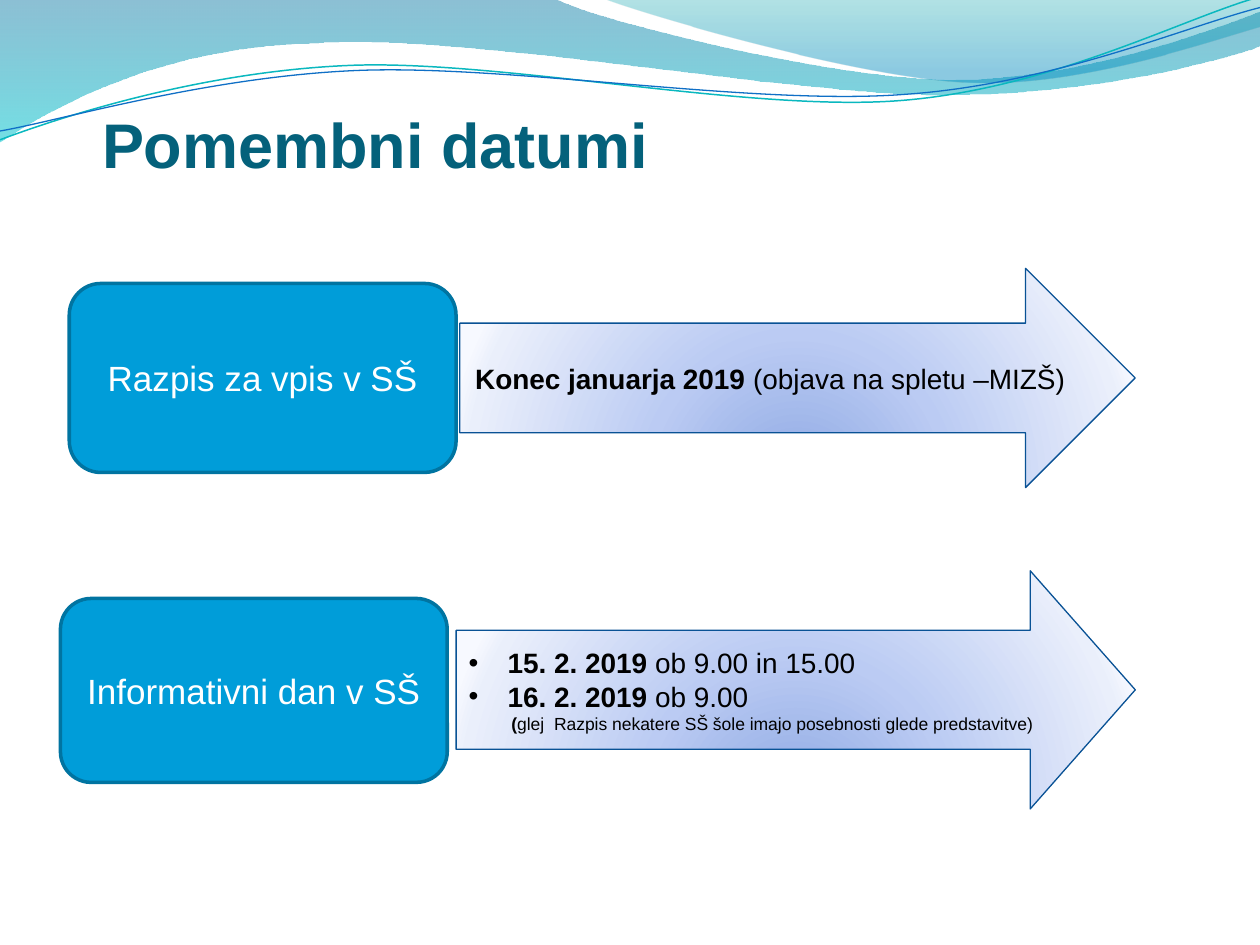
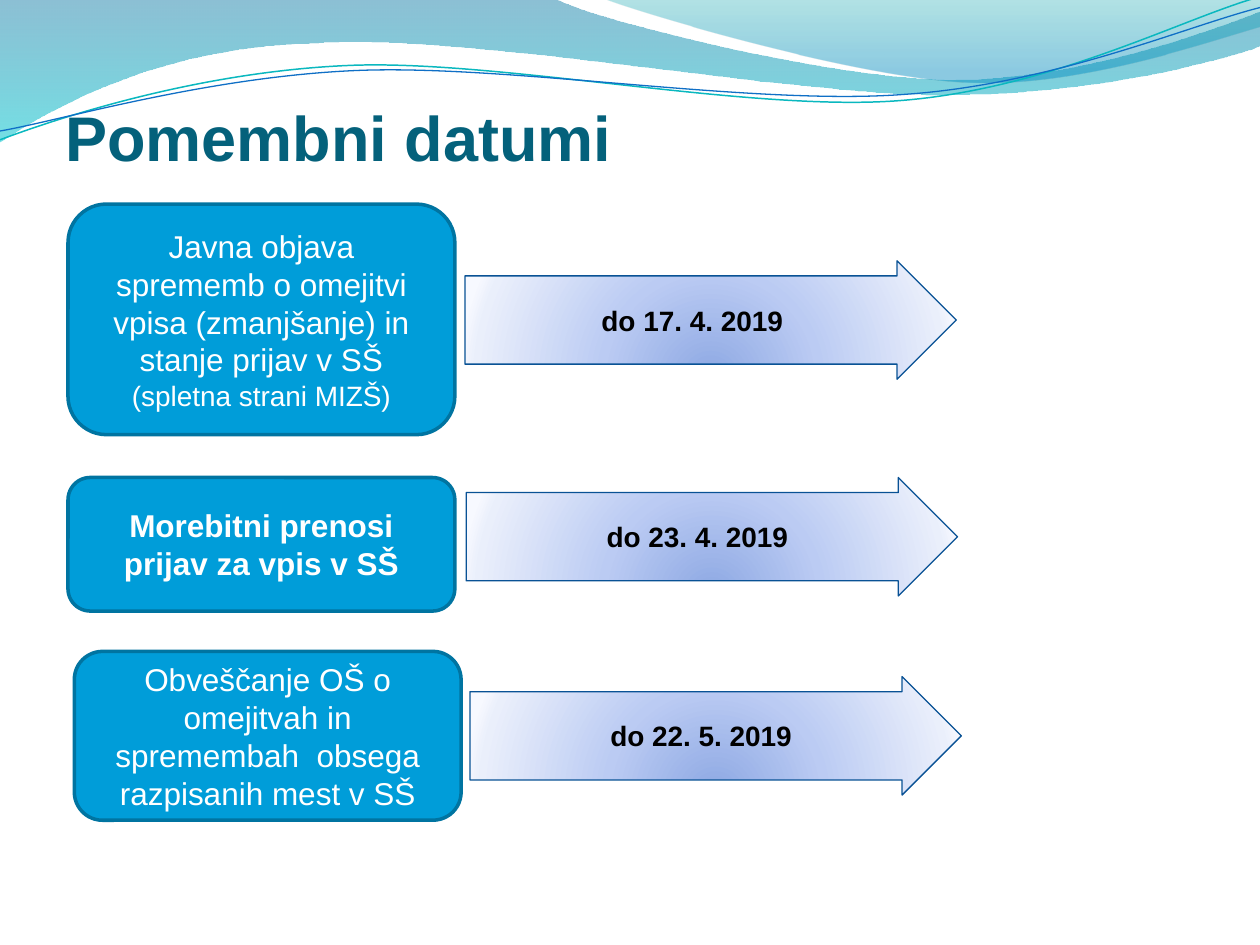
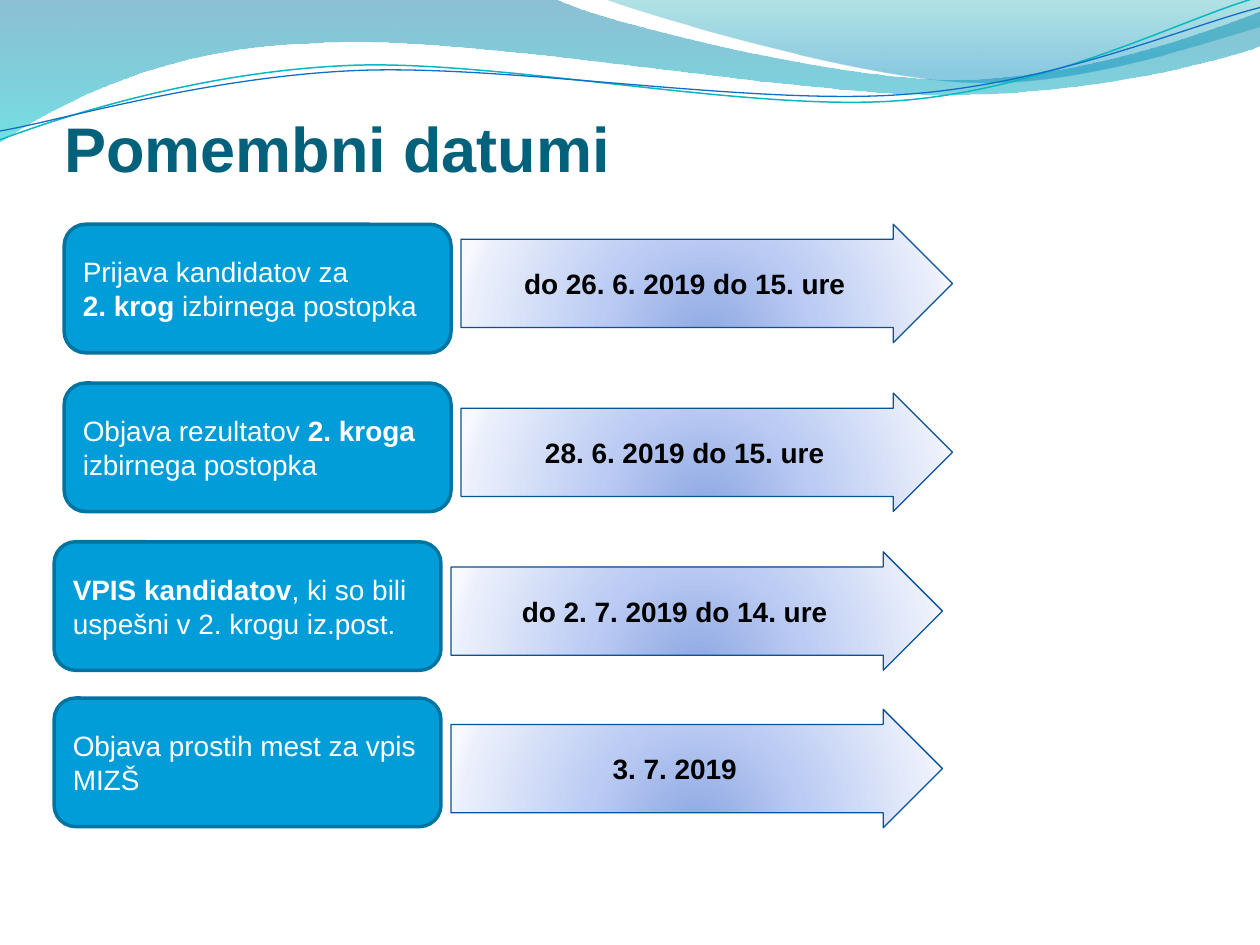
from lxml.etree import SubElement
from pptx import Presentation
from pptx.dml.color import RGBColor
from pptx.enum.shapes import MSO_SHAPE
from pptx.enum.text import MSO_ANCHOR, MSO_AUTO_SIZE, PP_ALIGN
from pptx.oxml import parse_xml
from pptx.oxml.ns import nsdecls, qn
from pptx.util import Pt

PX = 9144  # EMU in one px, 100 px to the inch
FONT = "Arial"
COLORS = {
    "title": "04617B", "box": "009DD9", "box_line": "0074A1",
    "arrow_line": "095295", "white": "FFFFFF", "black": "000000",
    "teal_line": "0AB8BF", "blue_line": "0F6FC6",
}
DOWN = '<a:lin ang="5400000" scaled="0"/>'
GLOW = ('<a:path path="circle">'
        '<a:fillToRect l="50000" t="130000" r="50000" b="-30000"/></a:path>')
ARROW_STOPS = [(0, "8DA8E3", 100), (43, "BBCBF3", 100),
               (93, "EAEFFB", 100), (100, "F7F9FF", 100)]

# Each path is a start point, then lines (x, y) and curves (two controls, end).
BANDS = [
    ([(0, 0), (440, -1), (476, 17, 664, 63, 758, 63), (853, 63, 958, 26, 1000, 9),
      (1001, 36), (983, 44, 870, 76, 746, 75), (622, 75, 382, 28, 257, 34),
      (129, 36, 46, 83, -1, 113), (0, 0)],
     [(0, "0074A1", 45), (100, "00C6CF", 55)]),
    ([(479, -1), (509, 11, 682, 62, 769, 65), (856, 69, 961, 32, 1000, 21),
      (1000, 0), (479, -1)],
     [(0, "00A1A9", 30), (80, "008BBF", 45)]),
]
STROKES = [
    ([(0, 111), (48, 93, 158, 57, 277, 52), (395, 47, 593, 89, 713, 80),
      (833, 71, 938, 15, 998, -2)], "teal_line", 0.85),
    ([(0, 104), (47, 96, 164, 61, 283, 56), (403, 51, 597, 84, 717, 75),
      (836, 67, 941, 21, 1000, 6)], "blue_line", 0.75),
]


def color(name):
    return RGBColor.from_string(COLORS[name])


def place(shape, box):
    for side, length in zip(("left", "top", "width", "height"), box):
        setattr(shape, side, length * PX)


def set_line(shape, name, width):
    shape.line.color.rgb = color(name)
    shape.line.width = Pt(width)


def set_gradient(shape, stops, direction):
    """Fill with stops of (position, colour, opacity), in percent."""
    marks = "".join(
        f'<a:gs pos="{position * 1000}"><a:srgbClr val="{value}">'
        f'<a:alpha val="{opacity * 1000}"/></a:srgbClr></a:gs>'
        for position, value, opacity in stops)
    shape.fill.gradient()
    properties = shape.element.spPr
    properties.replace(properties.find(qn("a:gradFill")), parse_xml(
        f'<a:gradFill {nsdecls("a")} rotWithShape="1">'
        f'<a:gsLst>{marks}</a:gsLst>{direction}</a:gradFill>'))


def bend(shape, segments):
    """Join the three lines that stand for each curve into one Bézier."""
    outline = shape.element.spPr.find(".//" + qn("a:path"))
    lines = iter(outline.findall(qn("a:lnTo")))
    for segment in segments:
        group = [next(lines) for _ in range(len(segment) // 2)]
        if len(group) == 1:
            continue
        curve = SubElement(outline, qn("a:cubicBezTo"))
        group[0].addprevious(curve)
        for step in group:
            curve.append(step[0])
            outline.remove(step)


def add_path(page, segments, close):
    start, *others = segments
    points = [pair for segment in others for pair in zip(segment[::2], segment[1::2])]
    builder = page.shapes.build_freeform(*start, scale=PX)
    builder.add_line_segments(points, close=close)
    shape = builder.convert_to_shape()
    bend(shape, others)
    shape.shadow.inherit = False
    return shape


def add_waves(page):
    """Draw the waves and hand them to the master, so all pages share them."""
    waves = []
    for segments, stops in BANDS:
        band = add_path(page, segments, True)
        set_gradient(band, stops, DOWN)
        band.line.fill.background()
        waves.append(band)
    for segments, name, width in STROKES:
        stroke = add_path(page, segments, False)
        stroke.fill.background()
        set_line(stroke, name, width)
        waves.append(stroke)
    tree = page.slide_layout.slide_master.shapes.element
    for index, wave in enumerate(waves):
        wave.element.nvSpPr.cNvPr.id = 101 + index
        tree.insert(2 + index, wave.element)


def add_span(para, text, **formats):
    span = para.add_run()
    span.text = text
    span.font.color.rgb = color(formats.pop("color"))
    for key, value in {"name": FONT, **formats}.items():
        setattr(span.font, key, value)


def set_indent(para, indent, bullet=False):
    properties = para._p.get_or_add_pPr()
    properties.set("marL", str(indent * PX))
    properties.set("indent", str(-indent * PX if bullet else 0))
    if bullet:
        properties.append(parse_xml(
            f'<a:buFont {nsdecls("a")} typeface="{FONT}"/>'))
        properties.append(parse_xml(f'<a:buChar {nsdecls("a")} char="•"/>'))


def add_title(page, box, indent=0):
    title = page.shapes.title
    place(title, box)
    frame = title.text_frame
    formats = {"margin_left": 0, "margin_right": 0, "margin_top": 5 * PX,
               "margin_bottom": 0, "word_wrap": True,
               "auto_size": MSO_AUTO_SIZE.NONE, "vertical_anchor": MSO_ANCHOR.BOTTOM}
    for key, value in formats.items():
        setattr(frame, key, value)
    para = frame.paragraphs[0]
    para.alignment = PP_ALIGN.LEFT
    set_indent(para, indent)
    add_span(para, "Pomembni datumi", size=Pt(36), bold=True, color="title")


def line(*spans, size=16, align=PP_ALIGN.CENTER, indent=0, bullet=False):
    """Describe a paragraph; a span is plain text, or a one-item list for bold."""
    return spans, size, align, indent, bullet


def write(shape, lines, text_color):
    frame = shape.text_frame
    frame.word_wrap = True
    frame.vertical_anchor = MSO_ANCHOR.MIDDLE
    for index, (spans, size, align, indent, bullet) in enumerate(lines):
        para = frame.paragraphs[0] if index == 0 else frame.add_paragraph()
        para.alignment = align
        if indent:
            set_indent(para, indent, bullet)
        for text in spans:
            bold = isinstance(text, list)
            add_span(para, text[0] if bold else text,
                     size=Pt(size), bold=bold, color=text_color)


def add_preset(page, kind, box):
    shape = page.shapes.add_shape(kind, *(length * PX for length in box))
    shape.shadow.inherit = False
    return shape


def add_event(page, box, lines):
    event = add_preset(page, MSO_SHAPE.ROUNDED_RECTANGLE, box)
    event.fill.solid()
    event.fill.fore_color.rgb = color("box")
    set_line(event, "box_line", 2)
    write(event, lines, "white")


def add_date_arrow(page, box, lines, shaft=0.745, head=0.5):
    arrow = add_preset(page, MSO_SHAPE.RIGHT_ARROW, box)
    arrow.adjustments[0], arrow.adjustments[1] = shaft, head
    set_gradient(arrow, ARROW_STOPS, GLOW)
    set_line(arrow, "arrow_line", 0.75)
    write(arrow, lines, "black")


def build_announcements(page):
    add_title(page, (51, 74, 899, 70), indent=30)
    add_event(page, (55, 225, 307, 150), [line("Razpis za vpis v SŠ", size=20)])
    add_event(page, (48, 475, 307, 146), [line("Informativni dan v SŠ", size=20)])
    left = PP_ALIGN.LEFT
    add_date_arrow(page, (362, 453, 539, 189), [
        line(["15. 2. 2019 "], "ob 9.00 in 15.00", align=left, indent=31, bullet=True),
        line(["16. 2. 2019 "], "ob 9.00", align=left, indent=31, bullet=True),
        line(["("], "glej  Razpis nekatere SŠ šole imajo posebnosti glede predstavitve)",
             size=10, align=left, indent=34),
    ], shaft=0.5, head=0.441)
    add_date_arrow(page, (365, 213, 536, 174), [
        line(["Konec januarja 2019 "], "(objava na spletu –MIZŠ)")], shaft=0.5)


def build_changes(page):
    add_title(page, (52, 76, 899, 62))
    rows = [
        ((54, 379, 307, 106), (370, 379), "do 23. 4. 2019", 12, [
            line(["Morebitni prenosi prijav za vpis v SŠ"], size=18)]),
        ((54, 162, 307, 183), (369, 207), "do 17. 4. 2019", 6, [
            line("Javna objava sprememb o omejitvi vpisa (zmanjšanje) "
                 "in stanje prijav v SŠ", size=18),
            line("(spletna strani MIZŠ)")]),
        ((59, 517, 307, 134), (373, 537), "do 22. 5. 2019", 12, [
            line("Obveščanje OŠ o omejitvah in spremembah  obsega "
                 "razpisanih mest v SŠ", size=18)]),
    ]
    for box, corner, date, indent, lines in rows:
        add_event(page, box, lines)
        add_date_arrow(page, (*corner, 390, 94), [line([date], indent=indent)])


def build_second_round(page):
    add_title(page, (51, 77, 899, 70))
    rows = [
        (51, 178, 0, "do 26. 6. 2019 do 15. ure",
         [("Prijava kandidatov za",), (["2. krog "], "izbirnega postopka")]),
        (51, 304, 8, "28. 6. 2019 do 15. ure",
         [("Objava rezultatov ", ["2. kroga "], "izbirnega postopka")]),
        (43, 554, 9, "3. 7. 2019", [("Objava prostih mest za vpis MIZŠ",)]),
        (43, 430, 8, "do 2. 7. 2019 do 14. ure",
         [(["VPIS kandidatov"], ", ki so bili uspešni v 2. krogu iz.post.")]),
    ]
    for left, top, _, _, texts in rows:
        add_event(page, (left, top, 307, 102),
                  [line(*spans, align=PP_ALIGN.LEFT) for spans in texts])
    for left, top, drop, date, _ in rows:
        add_date_arrow(page, (left + 315, top + drop, 390, 94), [line([date])])


def main():
    deck = Presentation()
    deck.slide_width, deck.slide_height = 1000 * PX, 750 * PX
    layout = deck.slide_layouts.get_by_name("Title Only")
    builders = (build_announcements, build_changes, build_second_round)
    for number, build in enumerate(builders):
        page = deck.slides.add_slide(layout)
        if number == 0:
            add_waves(page)
        build(page)
    deck.save("out.pptx")


if __name__ == "__main__":
    main()
